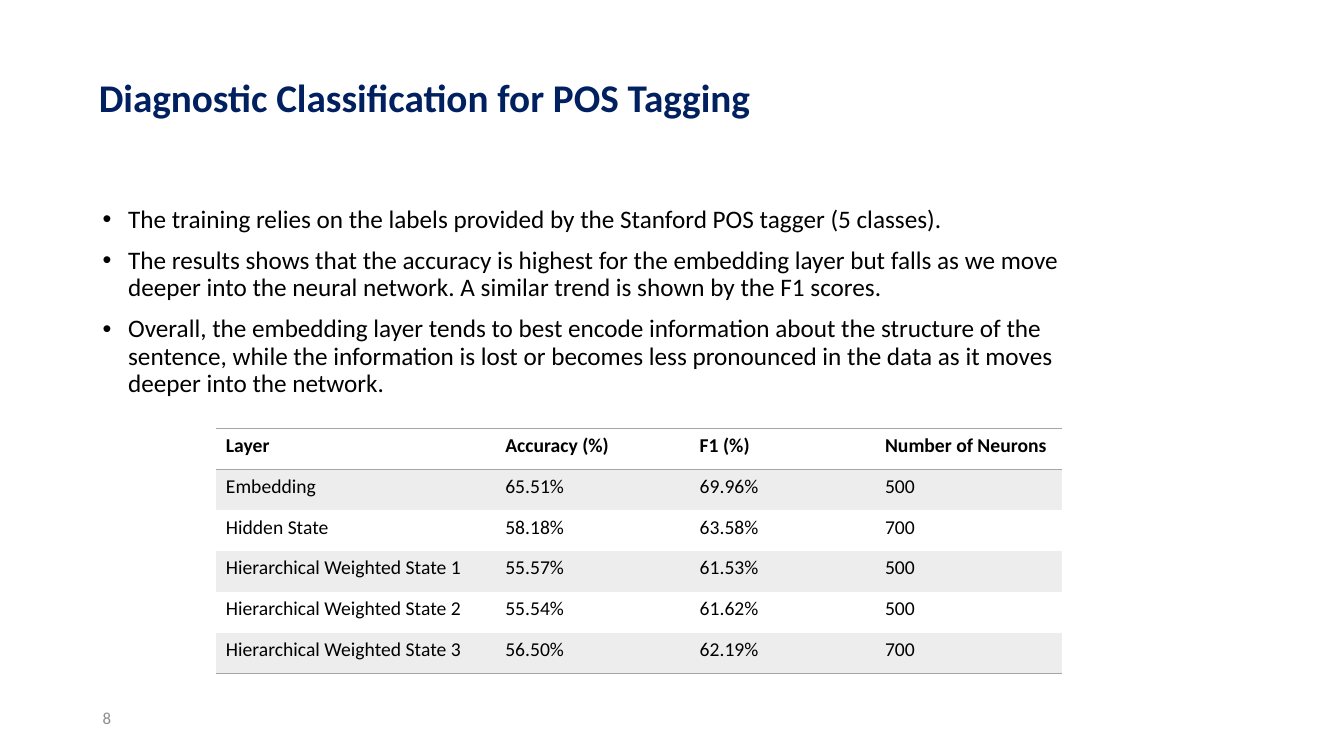
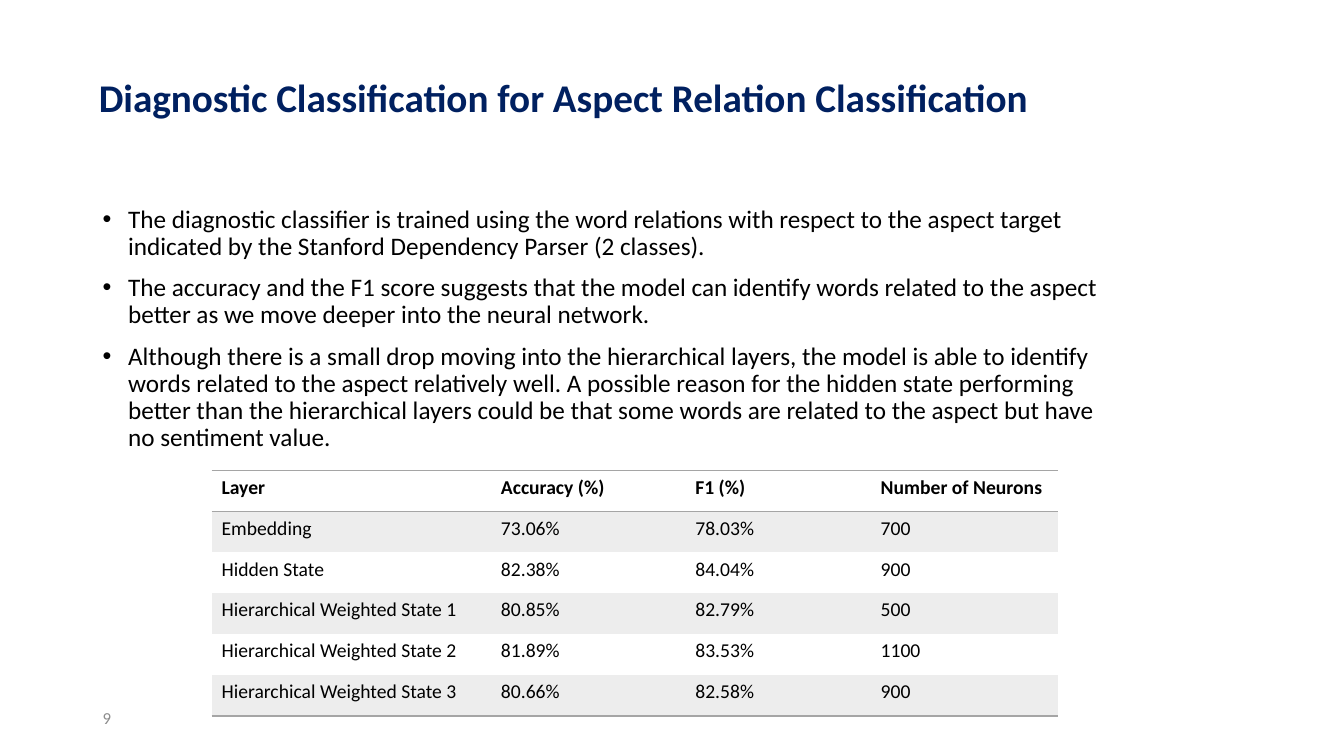
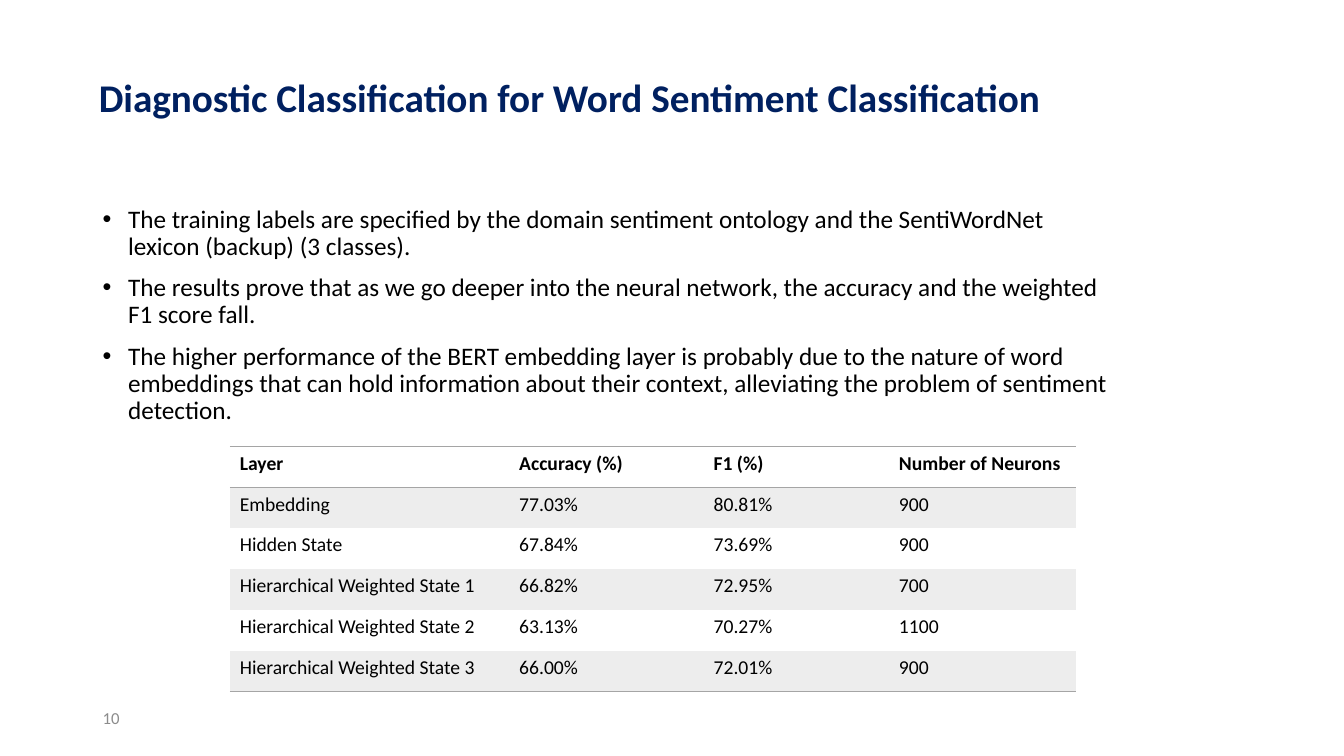
from lxml import etree
from pptx import Presentation
from pptx.dml.color import RGBColor
from pptx.enum import text
from pptx.oxml import ns
from pptx.util import Cm, Pt

NAVY = RGBColor(0x00, 0x20, 0x60)
BLACK = RGBColor(0x00, 0x00, 0x00)
GREY = RGBColor(0x8C, 0x8C, 0x8C)
RULE = RGBColor(0xA5, 0xA5, 0xA5)
BAND = RGBColor(0xED, 0xED, 0xED)
FONT = "Calibri"
PLAIN_TABLE = "{2D5ABB26-0587-4C30-8999-92F81FD0307C}"
FIRST_NUMBER = 8
COLUMN_WIDTHS = (7.04, 4.9, 4.67, 4.72)
ROW_HEIGHT = 1.03
HEADER = ("Layer", "Accuracy (%)", "F1 (%)", "Number of Neurons")
LAYERS = (
    "Embedding",
    "Hidden State",
    "Hierarchical Weighted State 1",
    "Hierarchical Weighted State 2",
    "Hierarchical Weighted State 3",
)

SLIDES = (
    {
        "title": "Diagnostic Classification for POS Tagging",
        "bullets": (
            "The training relies on the labels provided by the Stanford POS tagger (5 classes).",
            "The results shows that the accuracy is highest for the embedding layer but falls "
            "as we move deeper into the neural network. A similar trend is shown by the F1 scores.",
            "Overall, the embedding layer tends to best encode information about the structure "
            "of the sentence, while the information is lost or becomes less pronounced in the "
            "data as it moves deeper into the network.",
        ),
        "table_at": (5.44, 10.8),
        "scores": (
            ("65.51%", "69.96%", "500"),
            ("58.18%", "63.58%", "700"),
            ("55.57%", "61.53%", "500"),
            ("55.54%", "61.62%", "500"),
            ("56.50%", "62.19%", "700"),
        ),
    },
    {
        "title": "Diagnostic Classification for Aspect Relation Classification",
        "bullets": (
            "The diagnostic classifier is trained using the word relations with respect to the "
            "aspect target indicated by the Stanford Dependency Parser (2 classes).",
            "The accuracy and the F1 score suggests that the model can identify words related "
            "to the aspect better as we move deeper into the neural network.",
            "Although there is a small drop moving into the hierarchical layers, the model is "
            "able to identify words related to the aspect relatively well. A possible reason "
            "for the hidden state performing better than the hierarchical layers could be that "
            "some words are related to the aspect but have no sentiment value.",
        ),
        "table_at": (5.33, 11.86),
        "scores": (
            ("73.06%", "78.03%", "700"),
            ("82.38%", "84.04%", "900"),
            ("80.85%", "82.79%", "500"),
            ("81.89%", "83.53%", "1100"),
            ("80.66%", "82.58%", "900"),
        ),
    },
    {
        "title": "Diagnostic Classification for Word Sentiment Classification",
        "bullets": (
            "The training labels are specified by the domain sentiment ontology and the "
            "SentiWordNet lexicon (backup) (3 classes).",
            "The results prove that as we go deeper into the neural network, the accuracy and "
            "the weighted F1 score fall.",
            "The higher performance of the BERT embedding layer is probably due to the nature "
            "of word embeddings that can hold information about their context, alleviating the "
            "problem of sentiment detection.",
        ),
        "table_at": (5.79, 11.25),
        "scores": (
            ("77.03%", "80.81%", "900"),
            ("67.84%", "73.69%", "900"),
            ("66.82%", "72.95%", "700"),
            ("63.13%", "70.27%", "1100"),
            ("66.00%", "72.01%", "900"),
        ),
    },
)


def format_text(tf, size, color, bold=False):
    for p in tf.paragraphs:
        for r in p.runs:
            r.font.name = FONT
            r.font.size = Pt(size)
            r.font.bold = bold
            r.font.color.rgb = color


def add_text(s, box, content, size, color, bold=False, anchor=text.MSO_ANCHOR.MIDDLE):
    tf = s.shapes.add_textbox(*map(Cm, box)).text_frame
    tf.word_wrap = True
    tf.vertical_anchor = anchor
    tf.text = content
    format_text(tf, size, color, bold)
    return tf


def add_title(s, title):
    tf = add_text(s, (2.24, 1.45, 29, 2.13), title, 28, NAVY, bold=True)
    tf.paragraphs[0].line_spacing = 0.9


def add_bullets(s, bullets):
    tf = add_text(s, (2.34, 5.08, 26.11, 12.09), "\n".join(bullets), 18, BLACK,
                  anchor=text.MSO_ANCHOR.TOP)
    for p in tf.paragraphs:
        p.line_spacing = 0.9
        p.space_before = Pt(10)
        pPr = p._p.get_or_add_pPr()
        pPr.set("marL", str(Cm(0.64)))
        pPr.set("indent", str(Cm(-0.64)))
        etree.SubElement(pPr, ns.qn("a:buFont")).set("typeface", "Arial")
        etree.SubElement(pPr, ns.qn("a:buChar")).set("char", "•")


def add_border(cell, side):
    ln = etree.SubElement(cell._tc.get_or_add_tcPr(), ns.qn(f"a:ln{side}"))
    ln.set("w", str(Pt(1)))
    fill = etree.SubElement(ln, ns.qn("a:solidFill"))
    etree.SubElement(fill, ns.qn("a:srgbClr")).set("val", str(RULE))


def add_score_table(s, at, scores):
    rows = [HEADER] + [(layer, *values) for layer, values in zip(LAYERS, scores)]
    size = (sum(COLUMN_WIDTHS), ROW_HEIGHT * len(rows))
    table = s.shapes.add_table(len(rows), len(HEADER), *map(Cm, at + size)).table
    table.horz_banding = False
    table._tbl.tblPr.find(ns.qn("a:tableStyleId")).text = PLAIN_TABLE
    for column, width in zip(table.columns, COLUMN_WIDTHS):
        column.width = Cm(width)
    for i, row in enumerate(rows):
        table.rows[i].height = Cm(ROW_HEIGHT)
        borders = {0: "TB", len(rows) - 1: "B"}.get(i, "")
        for j, value in enumerate(row):
            cell = table.cell(i, j)
            cell.text = value
            format_text(cell.text_frame, 14, BLACK, bold=i == 0)
            for side in borders:
                add_border(cell, side)
            if i % 2:
                cell.fill.solid()
                cell.fill.fore_color.rgb = BAND
            else:
                cell.fill.background()


def add_slide_number(s, number):
    add_text(s, (2.34, 17.65, 29.21, 0.89), str(number), 12, GREY)


def main():
    prs = Presentation()
    prs.slide_width, prs.slide_height = Cm(33.87), Cm(19.05)
    for number, content in enumerate(SLIDES, FIRST_NUMBER):
        s = prs.slides.add_slide(prs.slide_layouts[6])
        add_bullets(s, content["bullets"])
        add_title(s, content["title"])
        add_slide_number(s, number)
        add_score_table(s, content["table_at"], content["scores"])
    prs.save("out.pptx")


if __name__ == "__main__":
    main()
